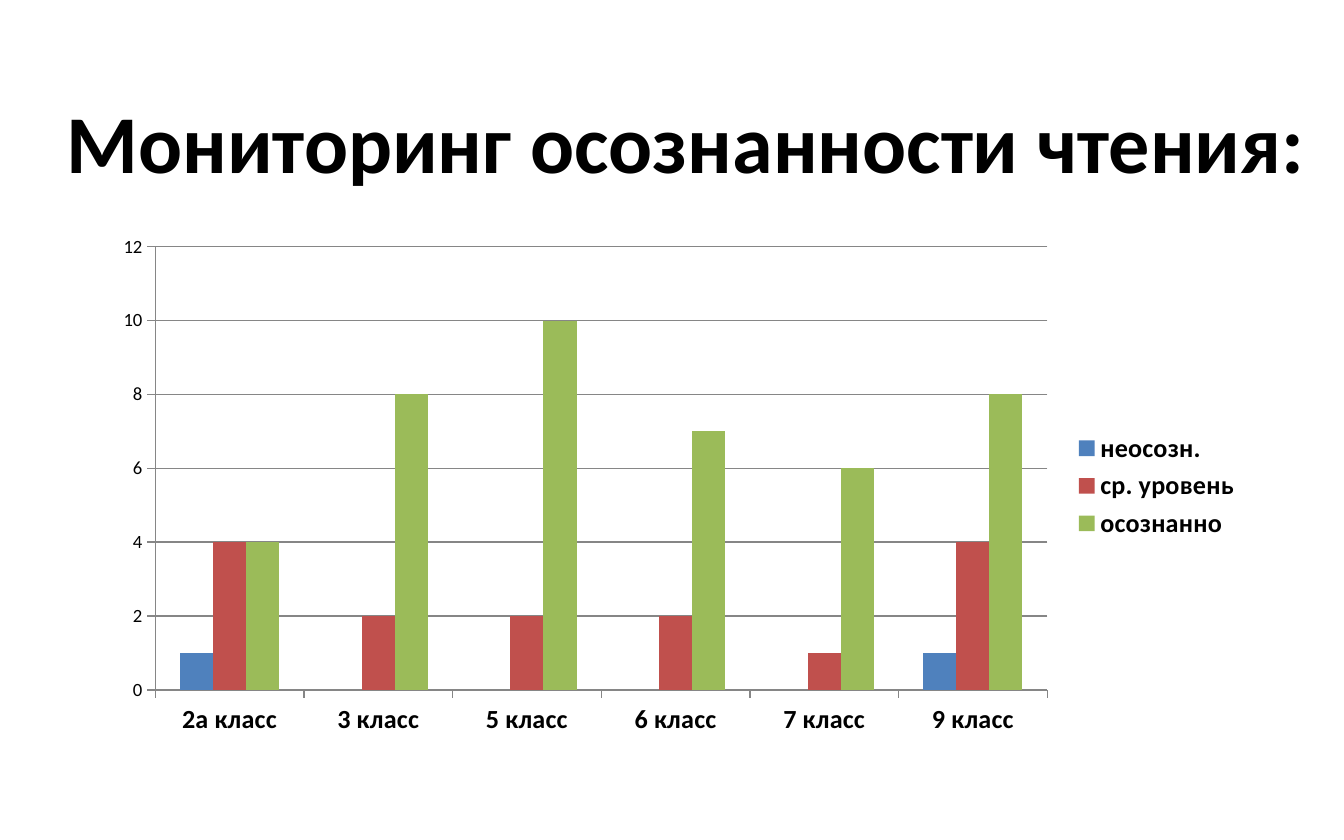
from pptx import Presentation
from pptx.chart.data import CategoryChartData
from pptx.dml.color import RGBColor
from pptx.enum.chart import XL_CHART_TYPE as ChartType, XL_LEGEND_POSITION as LegendPosition
from pptx.enum.chart import XL_TICK_MARK as TickMark
from pptx.enum.text import MSO_ANCHOR as Anchor, PP_ALIGN as Align
from pptx.util import Cm, Pt

FONT = "Calibri"
BLACK = "000000"
AXIS_GRAY = "868686"
CLASSES = ["2а класс", "3 класс", "5 класс", "6 класс", "7 класс", "9 класс"]
LEVELS = [
    ("неосозн.", [1, None, None, None, None, 1], "4F81BD"),
    ("ср. уровень", [4, 2, 2, 2, 1, 4], "C0504D"),
    ("осознанно", [4, 8, 10, 7, 6, 8], "9BBB59"),
]


def color(value):
    return RGBColor.from_string(value)


def style_font(font, size, bold=False):
    font.name = FONT
    font.size = Pt(size)
    font.bold = bold
    font.color.rgb = color(BLACK)


def style_line(line):
    line.color.rgb = color(AXIS_GRAY)
    line.width = Pt(0.75)


def set_title(page, text):
    title = page.shapes.title
    title.left, title.top, title.width, title.height = Cm(0.89), Cm(1.6), Cm(24.16), Cm(2.13)
    frame = title.text_frame
    frame.text = text
    frame.word_wrap = False
    frame.vertical_anchor = Anchor.MIDDLE
    para = frame.paragraphs[0]
    para.alignment = Align.CENTER
    style_font(para.font, 44, True)


def style_axis(axis, size, bold=False):
    axis.major_tick_mark = TickMark.OUTSIDE
    axis.minor_tick_mark = TickMark.NONE
    style_line(axis.format.line)
    style_font(axis.tick_labels.font, size, bold)


def add_level_chart(page):
    data = CategoryChartData()
    data.categories = CLASSES
    for name, values, fill in LEVELS:
        data.add_series(name, values)
    chart = page.shapes.add_chart(
        ChartType.COLUMN_CLUSTERED, Cm(1.9), Cm(4.27), Cm(21.8), Cm(9.83), data
    ).chart
    style_font(chart.font, 10)
    chart.has_title = False

    style_axis(chart.category_axis, 14, True)
    value_axis = chart.value_axis
    style_axis(value_axis, 10)
    value_axis.minimum_scale, value_axis.maximum_scale, value_axis.major_unit = 0, 12, 2
    value_axis.has_major_gridlines = True
    style_line(value_axis.major_gridlines.format.line)

    chart.has_legend = True
    chart.legend.position = LegendPosition.RIGHT
    chart.legend.include_in_layout = False
    style_font(chart.legend.font, 14, True)

    plot = chart.plots[0]
    plot.vary_by_categories = False
    plot.gap_width = 150
    plot.overlap = 0
    for series, (name, values, fill) in zip(plot.series, LEVELS):
        series.format.fill.solid()
        series.format.fill.fore_color.rgb = color(fill)


def main():
    deck = Presentation()
    deck.slide_width, deck.slide_height = Cm(25.4), Cm(15.88)
    page = deck.slides.add_slide(deck.slide_layouts[5])
    set_title(page, "Мониторинг осознанности чтения:")
    add_level_chart(page)
    deck.save("out.pptx")


if __name__ == "__main__":
    main()
